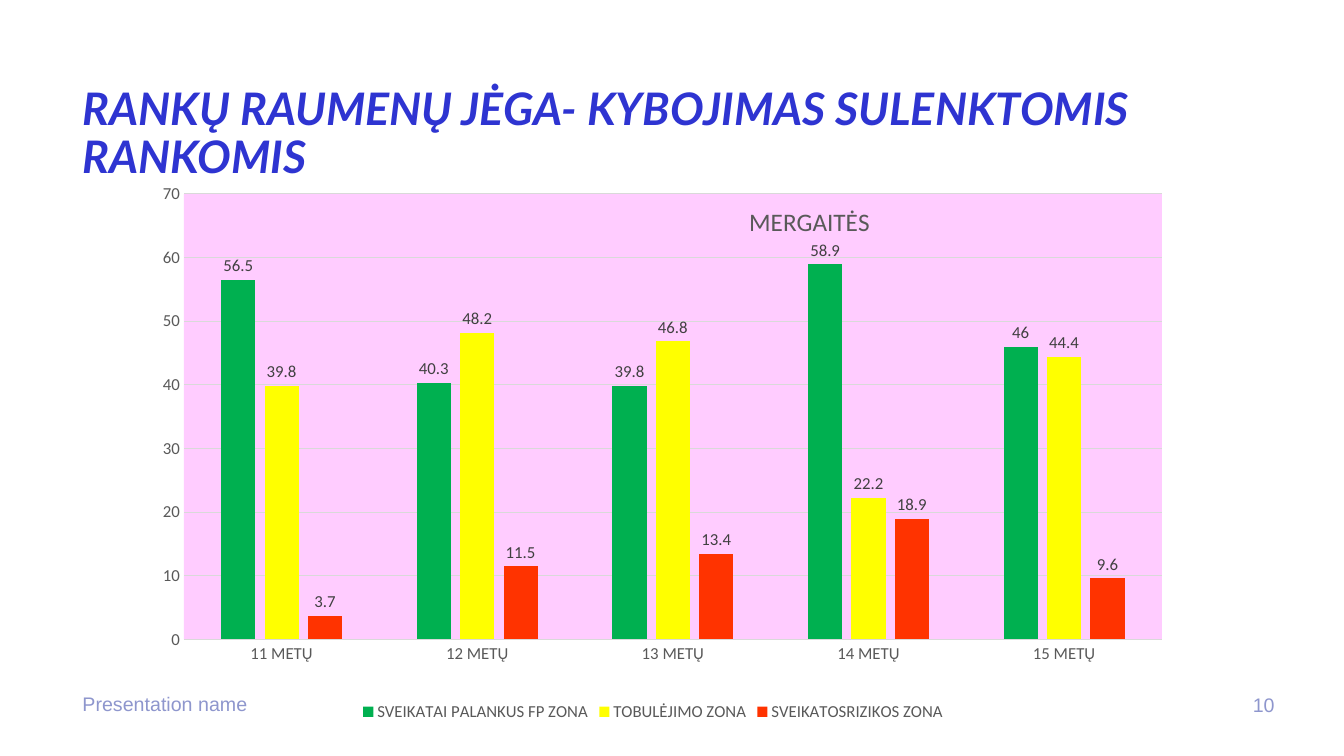
from lxml import etree
from pptx import Presentation
from pptx.chart.data import CategoryChartData
from pptx.dml.color import RGBColor
from pptx.enum import chart as ch, text
from pptx.oxml import parse_xml
from pptx.oxml.ns import nsdecls
from pptx.util import Inches, Pt


def style(font, size, color, name="Calibri"):
    font.size = Pt(size)
    font.name = name
    font.color.rgb = RGBColor.from_string(color)


def manual_layout(x, y, extra=""):
    return parse_xml(
        f'<c:layout {nsdecls("c")}><c:manualLayout>{extra}'
        f'<c:xMode val="edge"/><c:yMode val="edge"/>'
        f'<c:x val="{x}"/><c:y val="{y}"/></c:manualLayout></c:layout>')


prs = Presentation()
prs.slide_width, prs.slide_height = Inches(13.33), Inches(7.5)
s = prs.slides.add_slide(prs.slide_layouts[6])

left, middle = text.PP_ALIGN.LEFT, text.MSO_ANCHOR.MIDDLE
labels = [
    ("Presentation name", 0.72, 6.79, 6.3, 0.38, left, middle, 14, "8E96CD", "Arial"),
    ("10", 12.22, 6.79, 0.52, 0.4, text.PP_ALIGN.RIGHT, middle, 14, "8E96CD", "Arial"),
    ("RANKŲ RAUMENŲ JĖGA- KYBOJIMAS SULENKTOMIS RANKOMIS", 0.72, 0.81, 12.02, 1.38,
     left, text.MSO_ANCHOR.TOP, 32, "2E34D1", "Lato"),
]
for words, x, y, w, h, align, anchor, size, color, font in labels:
    sp = s.shapes.add_textbox(Inches(x), Inches(y), Inches(w), Inches(h))
    tf = sp.text_frame
    tf.word_wrap = True
    tf.vertical_anchor = anchor
    p = tf.paragraphs[0]
    p.text = words
    p.alignment = align
    style(p.runs[0].font, size, color, font)
p.line_spacing = 0.9
p.runs[0].font.bold = p.runs[0].font.italic = True

zones = [
    ("SVEIKATAI PALANKUS FP ZONA", "00B050", (56.5, 40.3, 39.8, 58.9, 46)),
    ("TOBULĖJIMO ZONA", "FFFF00", (39.8, 48.2, 46.8, 22.2, 44.4)),
    ("SVEIKATOSRIZIKOS ZONA", "FF3300", (3.7, 11.5, 13.4, 18.9, 9.6)),
]
data = CategoryChartData()
data.categories = [f"{age} METŲ" for age in range(11, 16)]
for name, color, values in zones:
    data.add_series(name, values)
chart = s.shapes.add_chart(ch.XL_CHART_TYPE.COLUMN_CLUSTERED, Inches(1.43), Inches(1.82),
                           Inches(10.1), Inches(5.38), data).chart
style(chart.font, 10, "000000")

title = chart.chart_title
title.text_frame.text = "MERGAITĖS"
r = title.text_frame.paragraphs[0].runs[0]
style(r.font, 18, "595959")
r.font.bold = False
title.include_in_layout = True
for old in title._element.xpath("c:layout"):
    title._element.remove(old)
title._element.xpath("c:tx")[0].addnext(manual_layout(0.59, 0.03))

chart.has_legend = True
chart.legend.position = ch.XL_LEGEND_POSITION.BOTTOM
chart.legend.include_in_layout = False
style(chart.legend.font, 12, "595959")

for axis in (chart.category_axis, chart.value_axis):
    axis.major_tick_mark = axis.minor_tick_mark = ch.XL_TICK_MARK.NONE
    style(axis.tick_labels.font, 12, "595959")
chart.value_axis.minimum_scale = 0
chart.value_axis.maximum_scale = 70
chart.value_axis.major_unit = 10
chart.value_axis.format.line.fill.background()
for line in (chart.category_axis.format.line, chart.value_axis.major_gridlines.format.line):
    line.color.rgb = RGBColor.from_string("D9D9D9")
    line.width = Pt(0.75)

plot = chart.plots[0]
plot.gap_width, plot.overlap = 219, -27
plot.vary_by_categories = False
for series, (name, color, values) in zip(plot.series, zones):
    series.format.fill.solid()
    series.format.fill.fore_color.rgb = RGBColor.from_string(color)
    dl = series.data_labels
    dl.show_value = True
    dl.position = ch.XL_LABEL_POSITION.OUTSIDE_END
    style(dl.font, 12, "404040")

area = chart._chartSpace.xpath("c:chart/c:plotArea")[0]
for old in area.xpath("c:layout"):
    area.remove(old)
layout = manual_layout(0.039, 0.019, '<c:layoutTarget val="inner"/>')
for tag, value in (("w", 0.961), ("h", 0.822)):
    size = etree.SubElement(layout[0], layout[0][-1].tag[:-1] + tag)
    size.set("val", str(value))
area.insert(0, layout)
area.append(parse_xml(
    f'<c:spPr {nsdecls("c", "a")}><a:solidFill><a:srgbClr val="FFCCFF"/></a:solidFill></c:spPr>'))

prs.save("out.pptx")
